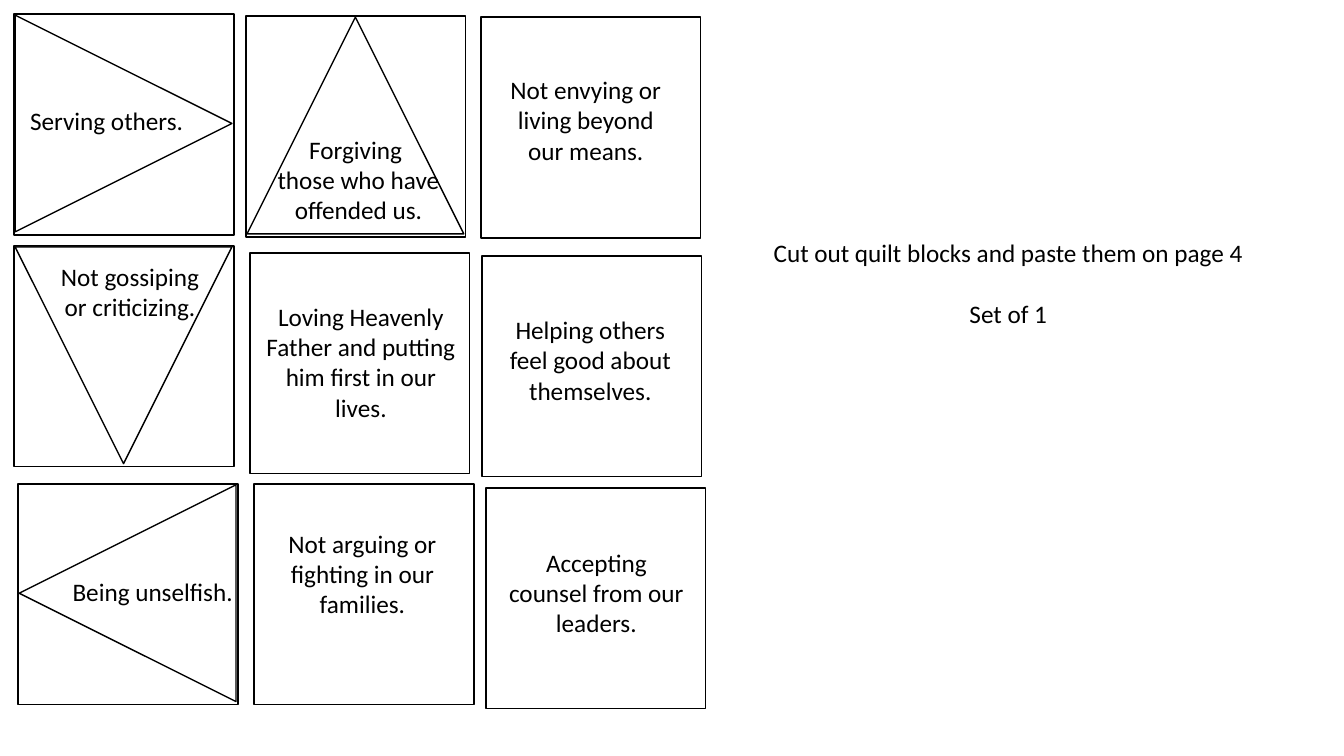
from collections import namedtuple

from pptx import Presentation
from pptx.dml.color import RGBColor
from pptx.enum.shapes import MSO_SHAPE as Preset
from pptx.enum.text import MSO_AUTO_SIZE as AutoSize, PP_ALIGN as Align
from pptx.util import Inches, Pt

COLORS = {"paper": "FFFFFF", "ink": "000000"}
FONT, TEXT_SIZE = "Calibri", 18

# Quilt grid, in inches
GRID_LEFT, GRID_TOP = 0.14, 0.14
COLUMN_STEP, ROW_STEP = 2.33, 2.34
BLOCK_WIDTH, BLOCK_HEIGHT = 2.18, 2.19
TRIANGLE_INSET, TRIANGLE_SIDE = 0.01, 2.15

# nudge: shift from the grid cell; caption: left, top, width, height in the block;
# turn: rotation of the block's triangle, None for a plain block
Block = namedtuple("Block", "column row nudge text caption turn align wrap",
                   defaults=(None, Align.CENTER, True))
BLOCKS = [
    Block(1, 1, (0.01, 0.03), "Loving Heavenly Father and putting him first in our lives.",
          (0.03, 0.43, 2.14, 1.44)),
    Block(0, 1, (0, -0.04), "Not gossiping or criticizing.", (0.29, 0.1, 1.72, 0.71), 180),
    Block(2, 0, (-0.03, 0.03), "Not envying or living beyond our means.",
          (0.12, 0.52, 1.84, 1.01)),
    Block(0, 2, (0.04, -0.02), "Being unselfish.", (0.43, 0.87, 1.81, 0.4), 270, wrap=False),
    Block(0, 0, (0, 0), "Serving others.", (0.06, 0.86, 1.74, 0.4), 90, Align.LEFT, False),
    Block(1, 0, (-0.03, 0.02), "Forgiving \nthose who have offended us.",
          (0.04, 1.12, 2.15, 1.01), 0),
    Block(1, 2, (0.05, -0.02), "Not arguing or fighting in our families.",
          (0.06, 0.39, 2.03, 1.01)),
    Block(2, 1, (-0.02, 0.06), "Helping others feel good about themselves.",
          (0.09, 0.53, 1.97, 1.01)),
    Block(2, 2, (0.02, 0.02), "Accepting counsel from our leaders.",
          (0.13, 0.54, 1.93, 1.01)),
]


def color(name):
    return RGBColor.from_string(COLORS[name])


def paint(shape):
    shape.fill.solid()
    shape.fill.fore_color.rgb = color("paper")


def add_outline(shapes, preset, box):
    shape = shapes.add_shape(preset, *map(Inches, box))
    shape.shadow.inherit = False
    paint(shape)
    shape.line.color.rgb = color("ink")
    shape.line.width = Pt(1)
    return shape


def add_text(shapes, box, text, align=Align.CENTER, wrap=True):
    shape = shapes.add_textbox(*map(Inches, box))
    frame = shape.text_frame
    frame.text = text
    frame.word_wrap = wrap
    frame.auto_size = AutoSize.SHAPE_TO_FIT_TEXT
    for paragraph in frame.paragraphs:
        paragraph.alignment = align
        for run in paragraph.runs:
            run.font.name = FONT
            run.font.size = Pt(TEXT_SIZE)
            run.font.color.rgb = color("ink")
    return shape


def add_block(slide, block, left, top):
    """One quilt block: square, optional triangle and caption, grouped."""
    shapes = slide.shapes.add_group_shape().shapes
    add_outline(shapes, Preset.RECTANGLE, (left, top, BLOCK_WIDTH, BLOCK_HEIGHT))
    if block.turn is not None:
        triangle = add_outline(shapes, Preset.ISOSCELES_TRIANGLE,
                               (left + TRIANGLE_INSET, top + TRIANGLE_INSET,
                                TRIANGLE_SIDE, TRIANGLE_SIDE))
        triangle.rotation = block.turn
    x, y, width, height = block.caption
    caption = add_text(shapes, (left + x, top + y, width, height),
                       block.text, block.align, block.wrap)
    if block.turn is None:
        paint(caption)


def add_quilt(slide, left, top):
    for block in BLOCKS:
        shift_x, shift_y = block.nudge
        add_block(slide, block,
                  left + block.column * COLUMN_STEP + shift_x,
                  top + block.row * ROW_STEP + shift_y)


def add_instructions(slide, box):
    shape = add_text(slide.shapes, box,
                     "Cut out quilt blocks and paste them on page 4\nSet of 1")
    shape.text_frame.paragraphs[1].space_before = Pt(22)


def main():
    presentation = Presentation()
    presentation.slide_width, presentation.slide_height = Inches(13.33), Inches(7.5)
    slide = presentation.slides.add_slide(presentation.slide_layouts[6])

    # Quilt blocks on the left, instructions on the right
    add_quilt(slide, GRID_LEFT, GRID_TOP)
    add_instructions(slide, (7.14, 2.3, 5.72, 1.01))

    presentation.save("out.pptx")


if __name__ == "__main__":
    main()
